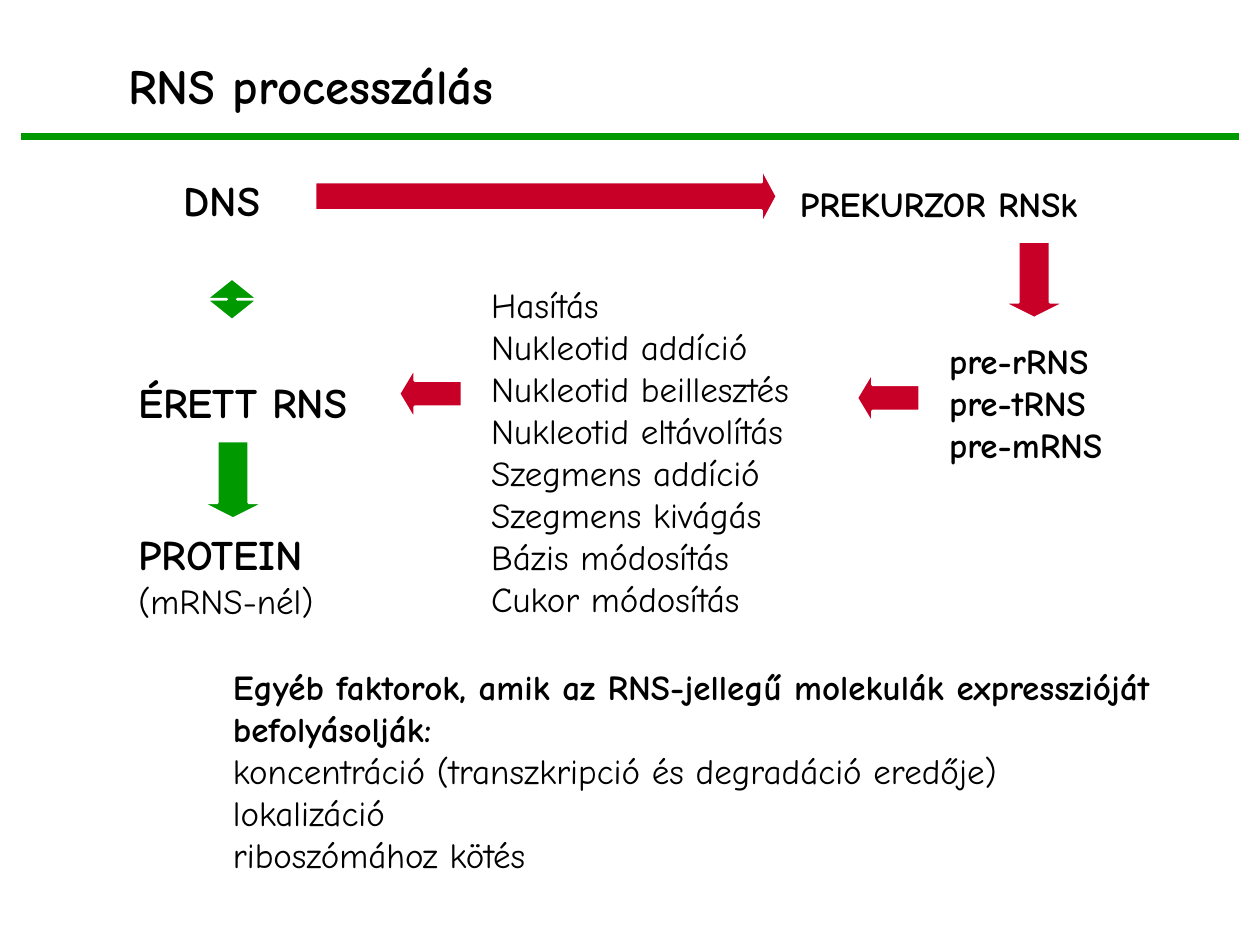
from dataclasses import dataclass

import pptx
import pptx.dml.color
import pptx.enum.shapes
import pptx.enum.text
import pptx.oxml
import pptx.oxml.ns
import pptx.util

COLUMNS, ROWS = 60, 45
CELL = pptx.util.Inches(10) // COLUMNS
Shape = pptx.enum.shapes.MSO_SHAPE


@dataclass(frozen=True)
class Theme:
    font: str = "Comic Neue"
    text: str = "000000"
    paper: str = "FFFFFF"
    green: str = "009900"
    red: str = "C80028"
    title: float = 28
    stage: float = 24
    body: float = 20
    outline: float = 1.5
    rule: float = 4.5


THEME = Theme()


@dataclass(frozen=True)
class Line:
    text: str
    size: float = THEME.body
    bold: bool = False
    before: float = 0
    indent: float = 0


def rgb(value):
    return pptx.dml.color.RGBColor.from_string(value)


def grid(*cells):
    return [round(c * CELL) for c in cells]


def write(s, lines, wrap=False):
    tf = s.text_frame
    tf.word_wrap = wrap
    tf.auto_size = pptx.enum.text.MSO_AUTO_SIZE.SHAPE_TO_FIT_TEXT
    tf.vertical_anchor = pptx.enum.text.MSO_ANCHOR.TOP
    for i, line in enumerate(lines):
        p = tf.add_paragraph() if i else tf.paragraphs[0]
        p.text = line.text
        p.alignment = pptx.enum.text.PP_ALIGN.LEFT
        p.space_before = pptx.util.Pt(line.before)
        p.font.name = THEME.font
        p.font.size = pptx.util.Pt(line.size)
        p.font.bold = line.bold
        p.font.color.rgb = rgb(THEME.text)
        if line.indent:
            p._p.get_or_add_pPr().set("marL", str(grid(line.indent)[0]))


def add_title(slide, text, box):
    s = slide.shapes.title
    s.left, s.top, s.width, s.height = grid(*box)
    write(s, [Line(text, THEME.title, True)])


def add_text(slide, box, lines, wrap=False):
    write(slide.shapes.add_textbox(*grid(*box)), lines, wrap)


def add_arrow(slide, kind, box, color, head):
    s = slide.shapes.add_shape(kind, *grid(*box))
    s.adjustments[0] = 0.5
    s.adjustments[1] = head
    s.shadow.inherit = False
    s.fill.solid()
    s.fill.fore_color.rgb = rgb(color)
    s.line.color.rgb = rgb(THEME.paper)
    s.line.width = pptx.util.Pt(THEME.outline)


def add_rule(slide, row):
    s = slide.shapes.add_connector(
        pptx.enum.shapes.MSO_CONNECTOR.STRAIGHT, *grid(1, row, COLUMNS - 1, row)
    )
    s.line.color.rgb = rgb(THEME.green)
    s.line.width = pptx.util.Pt(THEME.rule)
    s._element.spPr.append(pptx.oxml.parse_xml(
        f'<a:effectLst {pptx.oxml.ns.nsdecls("a")}/>'
    ))


def main():
    prs = pptx.Presentation()
    prs.slide_width, prs.slide_height = grid(COLUMNS, ROWS)
    slide = prs.slides.add_slide(prs.slide_layouts[5])

    add_title(slide, "RNS processzálás", (5.5, 2.35, 21.4, 3.4))
    add_rule(slide, 6.5)

    add_text(slide, (6, 8, 13.9, 22.8), [
        Line("DNS", THEME.stage, True, indent=2.15),
        Line("ÉRETT RNS", THEME.stage, True, before=87),
        Line("PROTEIN", THEME.stage, True, before=58),
        Line("(mRNS-nél)"),
    ])
    add_text(slide, (37.5, 8.4, 16.4, 2.65), [Line("PREKURZOR RNSk", bold=True)])
    add_text(slide, (44.6, 15.85, 9.8, 6.65), [
        Line(f"pre-{kind}RNS", bold=True) for kind in "rtm"
    ])
    add_text(slide, (22.8, 13.2, 17.9, 16.75), [Line(step) for step in (
        "Hasítás",
        "Nukleotid addíció",
        "Nukleotid beillesztés",
        "Nukleotid eltávolítás",
        "Szegmens addíció",
        "Szegmens kivágás",
        "Bázis módosítás",
        "Cukor módosítás",
    )])
    add_text(slide, (10.5, 31.4, 47.95, 10.7), [
        Line("Egyéb faktorok, amik az RNS-jellegű molekulák expresszióját "
             "befolyásolják:", bold=True),
        Line("koncentráció (transzkripció és degradáció eredője)"),
        Line("lokalizáció"),
        Line("riboszómához kötés"),
    ], wrap=True)

    for kind, box, color, head in (
        (Shape.DOWN_ARROW, (9.6, 21, 3, 3.7), THEME.green, 0.25),
        (Shape.UP_DOWN_ARROW, (9.8, 13.25, 2.5, 2), THEME.green, 0.2),
        (Shape.RIGHT_ARROW, (15, 8, 22, 2.7), THEME.red, 0.27),
        (Shape.DOWN_ARROW, (47.75, 11.5, 3, 3.65), THEME.red, 0.25),
        (Shape.LEFT_ARROW, (40.8, 17.7, 3, 2.5), THEME.red, 0.3),
        (Shape.LEFT_ARROW, (19, 17.5, 3, 2.5), THEME.red, 0.3),
    ):
        add_arrow(slide, kind, box, color, head)

    prs.save("out.pptx")


if __name__ == "__main__":
    main()
